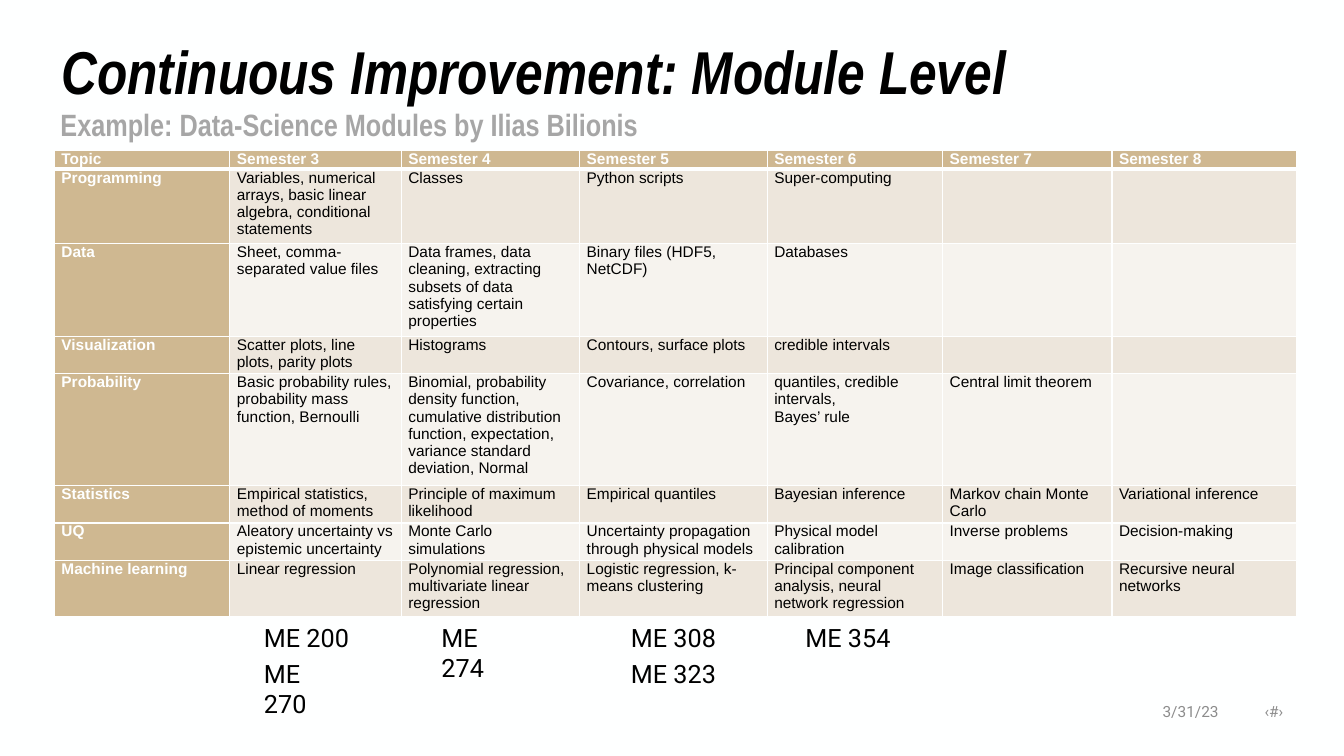
from lxml import etree
from pptx import Presentation
from pptx import util as u
from pptx.dml.color import RGBColor
from pptx.enum import text
from pptx.oxml.ns import qn

PX = 9144  # 100 px to the inch
WHITE, BLACK, GOLD = "FEFFFF", "000000", "CFB891"
BANDS = ["EDE6DC", "F6F3EE"]

COLUMN_WIDTHS = [174, 170, 177, 186, 174, 168, 183]
ROW_HEIGHTS = [19, 74, 92, 37, 111, 37, 37, 56]
MODULES = [
    ["Topic"] + [f"Semester {n}" for n in range(3, 9)],
    ["Programming",
     "Variables, numerical arrays, basic linear algebra, conditional statements",
     "Classes", "Python scripts", "Super-computing", "", ""],
    ["Data", "Sheet, comma-separated value files",
     "Data frames, data cleaning, extracting subsets of data satisfying certain properties",
     "Binary files (HDF5, NetCDF)", "Databases", "", ""],
    ["Visualization", "Scatter plots, line plots, parity plots", "Histograms",
     "Contours, surface plots", "credible intervals", "", ""],
    ["Probability", "Basic probability rules, probability mass function, Bernoulli",
     "Binomial, probability density function, cumulative distribution function, "
     "expectation, variance standard deviation, Normal",
     "Covariance, correlation", "quantiles, credible intervals,\nBayes’ rule",
     "Central limit theorem", ""],
    ["Statistics", "Empirical statistics, method of moments",
     "Principle of maximum likelihood", "Empirical quantiles", "Bayesian inference",
     "Markov chain Monte Carlo", "Variational inference"],
    ["UQ", "Aleatory uncertainty vs epistemic uncertainty", "Monte Carlo simulations",
     "Uncertainty propagation through physical models", "Physical model calibration",
     "Inverse problems", "Decision-making"],
    ["Machine learning", "Linear regression",
     "Polynomial regression, multivariate linear regression",
     "Logistic regression, k-means clustering",
     "Principal component analysis, neural network regression",
     "Image classification", "Recursive neural networks"],
]

# Course, left, top, width
COURSES = [
    ("ME 200", 252, 612, 107), ("ME 270", 252, 648, 103),
    ("ME 274", 428, 612, 101),
    ("ME 308", 616, 612, 107), ("ME 323", 616, 648, 107),
    ("ME 354", 789, 612, 107),
]


def px(n):
    return u.Emu(n * PX)


def color(hex_value):
    return RGBColor.from_string(hex_value)


def add_run(paragraph, words, size, font, hex_value, bold=False, italic=False):
    run = paragraph.add_run()
    run.text = words
    run.font.size = u.Pt(size)
    run.font.name = font
    run.font.color.rgb = color(hex_value)
    run.font.bold = bold
    run.font.italic = italic


def place_heading(holder, box, anchor, words, size, hex_value, italic=False):
    holder.left, holder.top, holder.width, holder.height = map(px, box)
    frame = holder.text_frame
    frame.auto_size = text.MSO_AUTO_SIZE.NONE
    frame.vertical_anchor = anchor
    line = frame.paragraphs[0]
    props = line._p.get_or_add_pPr()
    props.set("marL", "0")
    props.set("indent", "0")
    etree.SubElement(props, qn("a:buNone"))
    line.alignment = text.PP_ALIGN.LEFT
    line.line_spacing = 0.9
    line.space_before = u.Pt(0)
    add_run(line, words, size, "Arial Narrow", hex_value, True, italic)


def add_label(slide, box, words, size, hex_value):
    label = slide.shapes.add_textbox(*map(px, box))
    label.text_frame.word_wrap = True
    line = label.text_frame.paragraphs[0]
    add_run(line, words, size, "Roboto", hex_value)
    return label


def add_right_tabs(paragraph, stops):
    tabs = etree.SubElement(paragraph._p.get_or_add_pPr(), qn("a:tabLst"))
    for stop in stops:
        etree.SubElement(tabs, qn("a:tab"), pos=str(px(stop)), algn="r")


def set_borders(cell, widths):
    props = cell._tc.get_or_add_tcPr()
    for side, points in zip("LRTB", widths):
        edge = etree.SubElement(props, qn(f"a:ln{side}"), w=str(u.Pt(points)))
        fill = etree.SubElement(edge, qn("a:solidFill"))
        etree.SubElement(fill, qn("a:srgbClr"), val=WHITE)


def fill_cell(cell, words, row, column):
    heading = row == 0 or column == 0
    cell.margin_left = cell.margin_right = px(7)
    cell.margin_top = cell.margin_bottom = 0
    set_borders(cell, (1, 1, 3 if row == 1 else 1, 3 if row == 0 else 1))
    cell.fill.solid()
    cell.fill.fore_color.rgb = color(GOLD if heading else BANDS[(row - 1) % 2])
    if not words:
        return
    frame = cell.text_frame
    for i, part in enumerate(words.split("\n")):
        line = frame.add_paragraph() if i else frame.paragraphs[0]
        add_run(line, part, 11, "Arial", WHITE if heading else BLACK, heading)


def add_module_table(slide):
    table = slide.shapes.add_table(
        len(ROW_HEIGHTS), len(COLUMN_WIDTHS), px(54), px(149),
        px(sum(COLUMN_WIDTHS)), px(sum(ROW_HEIGHTS))).table
    for column, width in zip(table.columns, COLUMN_WIDTHS):
        column.width = px(width)
    for row, height in zip(table.rows, ROW_HEIGHTS):
        row.height = px(height)
    for r, topic in enumerate(MODULES):
        for c, words in enumerate(topic):
            fill_cell(table.cell(r, c), words, r, c)


def main():
    deck = Presentation()
    deck.slide_width, deck.slide_height = px(1333), px(750)
    slide = deck.slides.add_slide(deck.slide_layouts[1])
    slide.background.fill.solid()
    slide.background.fill.fore_color.rgb = color(WHITE)

    # Headings
    place_heading(slide.shapes.title, (51, 42, 1232, 64), text.MSO_ANCHOR.MIDDLE,
                  "Continuous Improvement: Module Level", 43.2, BLACK, True)
    place_heading(slide.placeholders[1], (50, 104, 1233, 40), text.MSO_ANCHOR.TOP,
                  "Example: Data-Science Modules by Ilias Bilionis", 22, "A6A6A6")

    # Modules by topic and semester
    add_module_table(slide)

    # Courses under their semesters
    for course, left, top, width in COURSES:
        add_label(slide, (left, top, width, 40), course, 18, BLACK)

    # Date and page mark
    footer = add_label(slide, (1088, 688, 195, 35), "\t3/31/23\t‹#›", 11, "8C8C8C")
    footer.text_frame.vertical_anchor = text.MSO_ANCHOR.MIDDLE
    add_right_tabs(footer.text_frame.paragraphs[0], (111, 175))

    deck.save("out.pptx")


if __name__ == "__main__":
    main()
